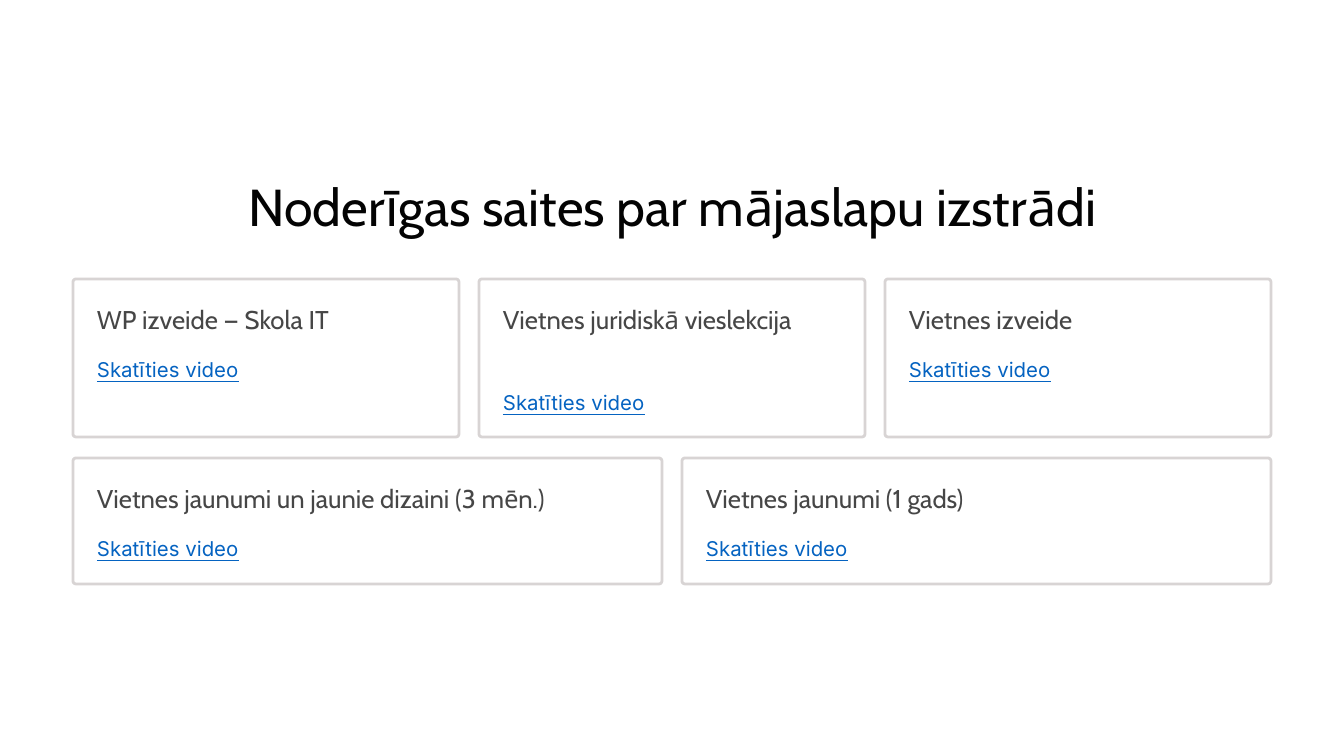
"""Builds a slide of video link cards under a centred title."""
from dataclasses import dataclass

import pptx
import pptx.dml.color
import pptx.enum.shapes
import pptx.enum.text
import pptx.shapes.autoshape
import pptx.slide
import pptx.util

PIXELS_PER_INCH = 84
ROW_LEFT, ROW_WIDTH, GAP, PADDING = 73, 1198, 20, 24
CORNER_RADIUS = 3
LINK_TEXT = "Skatīties video"
TITLE_FONT = {"name": "Cabin", "size": pptx.util.Pt(44.5)}
NAME_FONT = {"name": "Cabin", "size": pptx.util.Pt(22)}
LINK_FONT = {"name": "Inter", "size": pptx.util.Pt(17.5), "underline": True}


@dataclass
class Card:
    name: str
    name_height: int = 33
    link_offset: int = 69


@dataclass
class CardRow:
    top: int
    height: int
    cards: list[Card]


ROWS = [
    CardRow(279, 158, [
        Card("WP izveide — Skola IT"),
        Card("Vietnes juridiskā vieslekcija", 66, 102),
        Card("Vietnes izveide"),
    ]),
    CardRow(458, 126, [
        Card("Vietnes jaunumi un jaunie dizaini (3 mēn.)"),
        Card("Vietnes jaunumi (1 gads)"),
    ]),
]


def px(length: int) -> pptx.util.Emu:
    return pptx.util.Emu(round(length * 914400 / PIXELS_PER_INCH))


def paint(color: pptx.dml.color.ColorFormat, value: str) -> None:
    color.rgb = pptx.dml.color.RGBColor.from_string(value)


def write(shape: pptx.shapes.autoshape.Shape, text: str, font: dict,
          color: str, line_spacing: float,
          alignment: pptx.enum.text.PP_ALIGN = pptx.enum.text.PP_ALIGN.LEFT) -> None:
    frame_format = {
        "margin_left": 0, "margin_top": 0, "margin_right": 0, "margin_bottom": 0,
        "word_wrap": True,
        "auto_size": pptx.enum.text.MSO_AUTO_SIZE.NONE,
        "vertical_anchor": pptx.enum.text.MSO_ANCHOR.TOP,
    }
    for key, value in frame_format.items():
        setattr(shape.text_frame, key, value)
    paragraph = shape.text_frame.paragraphs[0]
    paragraph.alignment = alignment
    paragraph.line_spacing = pptx.util.Pt(line_spacing)
    run = paragraph.add_run()
    run.text = text
    for key, value in font.items():
        setattr(run.font, key, value)
    paint(run.font.color, color)


def add_title(slide: pptx.slide.Slide, text: str) -> None:
    title = slide.shapes.title
    position = {"left": 181, "top": 172, "width": 983, "height": 66}
    for key, value in position.items():
        setattr(title, key, px(value))
    write(title, text, TITLE_FONT, "030303", 55.5, pptx.enum.text.PP_ALIGN.CENTER)


def add_card(slide: pptx.slide.Slide, card: Card, left: int, top: int,
             width: int, height: int) -> None:
    frame = slide.shapes.add_shape(
        pptx.enum.shapes.MSO_SHAPE.ROUNDED_RECTANGLE,
        px(left), px(top), px(width), px(height))
    frame.adjustments[0] = CORNER_RADIUS / height
    frame.shadow.inherit = False
    frame.fill.solid()
    paint(frame.fill.fore_color, "FFFFFF")
    paint(frame.line.color, "D8D4D4")
    frame.line.width = pptx.util.Pt(2.4)

    text_left, text_width = px(left + PADDING), px(width - 2 * PADDING)
    name = slide.shapes.add_textbox(
        text_left, px(top + PADDING), text_width, px(card.name_height))
    write(name, card.name, NAME_FONT, "464646", 27.5)
    link = slide.shapes.add_textbox(
        text_left, px(top + card.link_offset), text_width, px(34))
    write(link, LINK_TEXT, LINK_FONT, "0563C1", 28.5)


def add_row(slide: pptx.slide.Slide, row: CardRow) -> None:
    count = len(row.cards)
    width = (ROW_WIDTH - GAP * (count - 1)) // count
    for index, card in enumerate(row.cards):
        left = ROW_LEFT + index * (width + GAP)
        add_card(slide, card, left, row.top, width, row.height)


def main() -> None:
    presentation = pptx.Presentation()
    presentation.slide_width = px(16 * PIXELS_PER_INCH)
    presentation.slide_height = px(9 * PIXELS_PER_INCH)
    slide = presentation.slides.add_slide(presentation.slide_layouts[5])
    slide.background.fill.solid()
    paint(slide.background.fill.fore_color, "FFFFFF")
    add_title(slide, "Noderīgas saites par mājaslapu izstrādi")
    for row in ROWS:
        add_row(slide, row)
    presentation.save("out.pptx")


if __name__ == "__main__":
    main()
